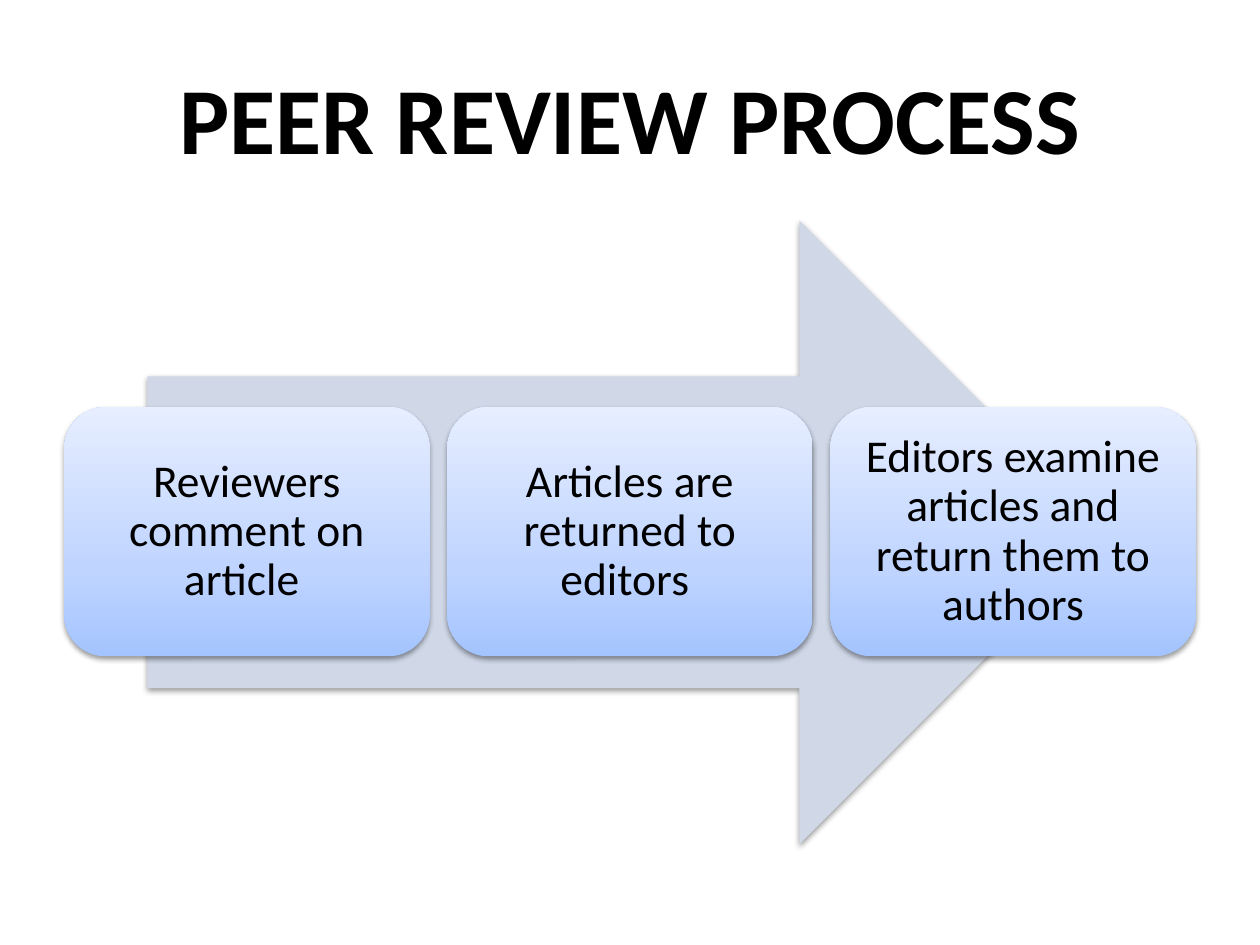
from pptx import Presentation
from pptx.dml.color import RGBColor
from pptx.enum.shapes import MSO_SHAPE
from pptx.enum.text import MSO_ANCHOR, PP_ALIGN
from pptx.oxml import parse_xml
from pptx.oxml.ns import nsdecls
from pptx.util import Inches, Pt

ARROW = MSO_SHAPE.RIGHT_ARROW
ROUNDED = MSO_SHAPE.ROUNDED_RECTANGLE
MIDDLE = MSO_ANCHOR.MIDDLE
CENTER = PP_ALIGN.CENTER


def rgb(value):
    return RGBColor.from_string(value)


class Deck:
    font = "Calibri"
    ink = "000000"
    arrow_fill = "D0D8E8"
    step_stops = ((0, "A4C4FF"), (35, "BFD4FF"), (100, "E6EEFF"))

    def __init__(self, prs):
        self.slide = prs.slides.add_slide(prs.slide_layouts[6])

    def shape(self, kind, x, y, w, h):
        s = self.slide.shapes.add_shape(kind, Inches(x), Inches(y), Inches(w), Inches(h))
        s.line.fill.background()
        s._element.spPr.append(parse_xml(
            f'<a:effectLst {nsdecls("a")}>'
            f'<a:outerShdw blurRad="{Pt(3.1)}" dist="{Pt(1.6)}" dir="5400000" rotWithShape="0">'
            f'<a:srgbClr val="{self.ink}"><a:alpha val="38000"/></a:srgbClr>'
            '</a:outerShdw></a:effectLst>'))
        return s

    def arrow(self, x, y, w, h):
        s = self.shape(ARROW, x, y, w, h)
        s.fill.solid()
        s.fill.fore_color.rgb = rgb(self.arrow_fill)

    def gradient(self, s):
        stops = "".join(
            f'<a:gs pos="{pos * 1000}"><a:srgbClr val="{color}"/></a:gs>'
            for pos, color in self.step_stops)
        s._element.spPr.prstGeom.addnext(parse_xml(
            f'<a:gradFill {nsdecls("a")} rotWithShape="1"><a:gsLst>{stops}</a:gsLst>'
            '<a:lin ang="16200000" scaled="0"/></a:gradFill>'))

    def text(self, text, x, y, w, h, size, bold=False, inset=0.1, spacing=1.0):
        s = self.slide.shapes.add_textbox(Inches(x), Inches(y), Inches(w), Inches(h))
        tf = s.text_frame
        tf.word_wrap = True
        tf.vertical_anchor = MIDDLE
        tf.margin_left = tf.margin_right = Inches(inset)
        tf.margin_top = tf.margin_bottom = Inches(inset)
        p = tf.paragraphs[0]
        p.alignment = CENTER
        p.line_spacing = spacing
        r = p.add_run()
        r.text = text
        r.font.name = self.font
        r.font.size = Pt(size)
        r.font.bold = bold
        r.font.color.rgb = rgb(self.ink)

    def step(self, text, x, y, w, h, pad=0.1):
        self.gradient(self.shape(ROUNDED, x, y, w, h))
        self.text(text, x + pad, y + pad, w - 2 * pad, h - 2 * pad, 26,
                  inset=0.11, spacing=0.9)


def main():
    prs = Presentation()
    prs.slide_width, prs.slide_height = Inches(10), Inches(7.5)
    deck = Deck(prs)
    deck.text("PEER REVIEW PROCESS", 0.5, 0.3, 9, 1.25, 54, bold=True)
    deck.arrow(1.17, 1.75, 7.65, 4.95)
    steps = (
        "Reviewers comment on article ",
        "Articles are returned to editors ",
        "Editors examine articles and return them to authors",
    )
    width, gap = 2.9, 0.14
    for i, text in enumerate(steps):
        deck.step(text, 0.51 + i * (width + gap), 3.23, width, 1.98)
    prs.save("out.pptx")


if __name__ == "__main__":
    main()
